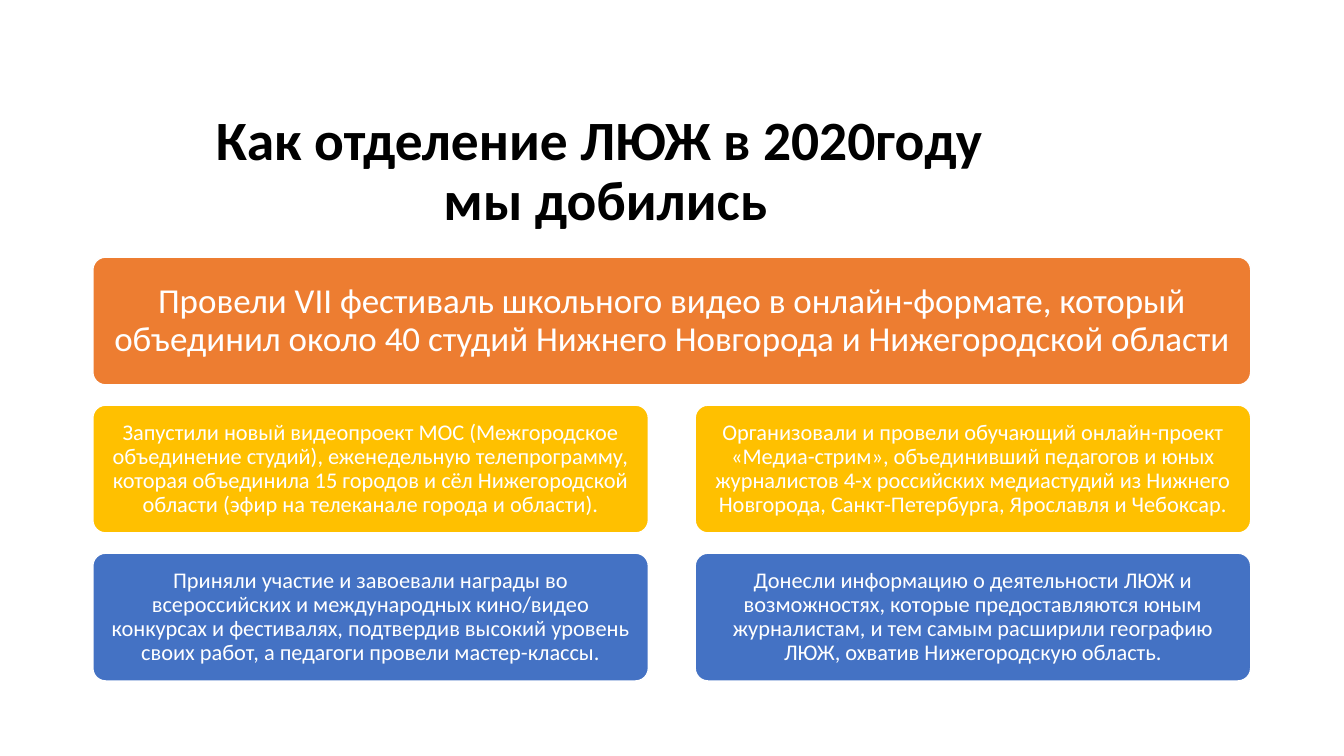
"""Builds the slide on the 2020 achievements of the ЛЮЖ branch."""
from pptx import Presentation
from pptx.dml.color import RGBColor
from pptx.enum.shapes import MSO_SHAPE as Preset
from pptx.enum.text import MSO_ANCHOR as Anchor, PP_ALIGN as Align
from pptx.util import Cm, Pt

BLACK = RGBColor(0x00, 0x00, 0x00)
WHITE = RGBColor(0xFF, 0xFF, 0xFF)
ORANGE = RGBColor(0xED, 0x7D, 0x31)
GOLD = RGBColor(0xFF, 0xC0, 0x00)
BLUE = RGBColor(0x44, 0x72, 0xC4)

LEFT, TOP = 2.34, 6.48
FULL_WIDTH, HALF_WIDTH, CARD_HEIGHT = 29.18, 14.0, 3.22
COLUMN_STEP = FULL_WIDTH - HALF_WIDTH
ROW_STEP = 3.73


def write(shape, text, size, color, inset_x, inset_y, bold=False):
    frame = shape.text_frame
    frame.word_wrap = True
    frame.vertical_anchor = Anchor.MIDDLE
    frame.margin_left = frame.margin_right = Cm(inset_x)
    frame.margin_top = frame.margin_bottom = Cm(inset_y)
    frame.text = text
    paragraph = frame.paragraphs[0]
    paragraph.alignment = Align.CENTER
    paragraph.line_spacing = 0.9
    for run in paragraph.runs:
        run.font.name = "Calibri"
        run.font.size = Pt(size)
        run.font.bold = bold
        run.font.color.rgb = color


deck = Presentation()
deck.slide_width, deck.slide_height = Cm(33.87), Cm(19.05)
slide = deck.slides.add_slide(deck.slide_layouts[6])

heading = slide.shapes.add_textbox(Cm(1.47), Cm(2.82), Cm(27.58), Cm(3.07))
write(heading, "Как отделение ЛЮЖ в 2020году \vмы добились", 39.6, BLACK,
      0.25, 0.13, bold=True)

achievements = [
    (0, 0, FULL_WIDTH, ORANGE, 25, 0.25,
     "Провели VII фестиваль школьного видео в онлайн-формате, который "
     "объединил около 40 студий Нижнего Новгорода и Нижегородской области"),
    (1, 0, HALF_WIDTH, GOLD, 16, 0.17,
     "Запустили новый видеопроект МОС (Межгородское объединение студий), "
     "еженедельную телепрограмму, которая объединила 15 городов и сёл "
     "Нижегородской области (эфир на телеканале города и области)."),
    (2, 0, HALF_WIDTH, BLUE, 16, 0.17,
     "Приняли участие и завоевали награды во всероссийских и международных "
     "кино/видео конкурсах и фестивалях, подтвердив высокий уровень своих "
     "работ, а педагоги провели мастер-классы."),
    (1, 1, HALF_WIDTH, GOLD, 16, 0.17,
     "Организовали и провели обучающий онлайн-проект «Медиа-стрим», "
     "объединивший педагогов и юных журналистов 4-х российских медиастудий "
     "из Нижнего Новгорода, Санкт-Петербурга, Ярославля и Чебоксар."),
    (2, 1, HALF_WIDTH, BLUE, 16, 0.17,
     "Донесли информацию о деятельности ЛЮЖ и возможностях, которые "
     "предоставляются юным журналистам, и тем самым расширили географию "
     "ЛЮЖ, охватив Нижегородскую область."),
]

for row, column, width, color, size, inset, text in achievements:
    card = slide.shapes.add_shape(
        Preset.ROUNDED_RECTANGLE,
        Cm(LEFT + column * COLUMN_STEP), Cm(TOP + row * ROW_STEP),
        Cm(width), Cm(CARD_HEIGHT))
    card.adjustments[0] = 0.1
    card.shadow.inherit = False
    card.fill.solid()
    card.fill.fore_color.rgb = color
    card.line.color.rgb = WHITE
    card.line.width = Pt(1)
    write(card, text, size, WHITE, inset, inset)

deck.save("out.pptx")
